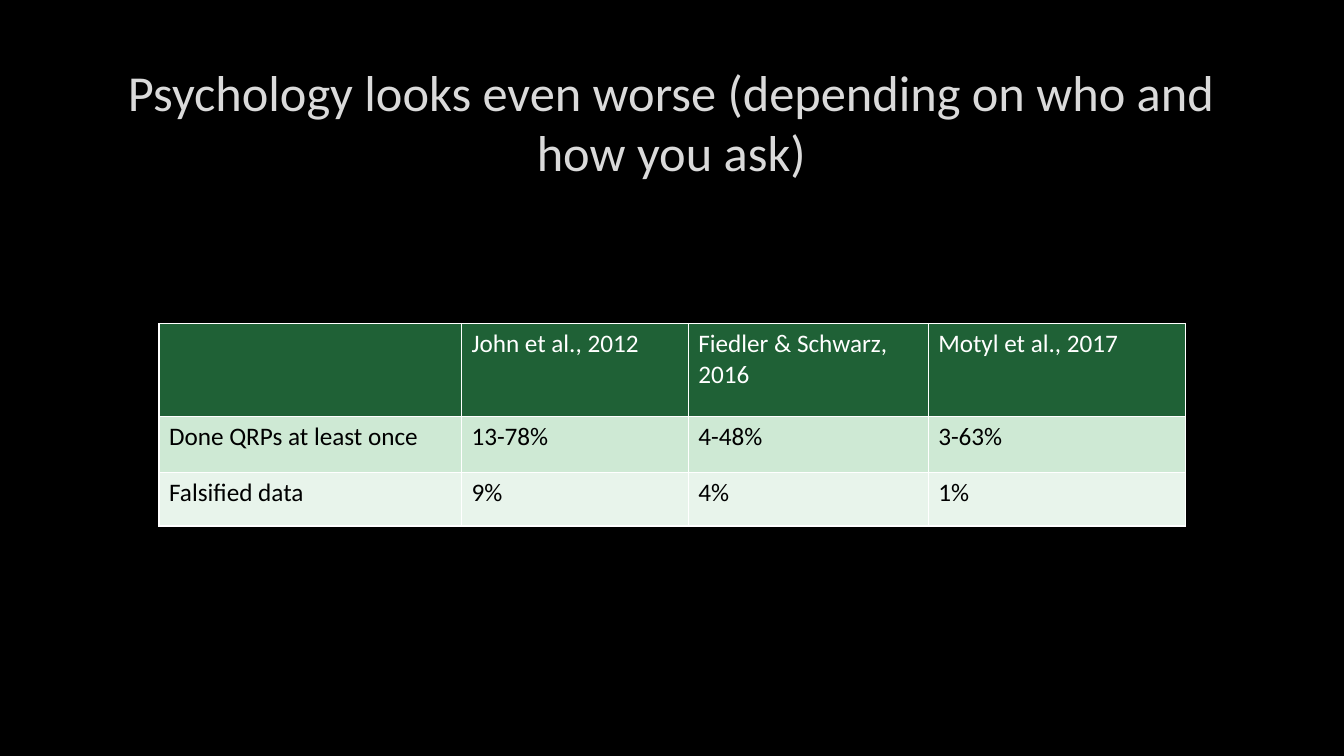
from lxml import etree
from pptx import Presentation
from pptx.dml.color import RGBColor
from pptx.enum.text import MSO_ANCHOR, MSO_AUTO_SIZE, PP_ALIGN
from pptx.oxml.ns import qn
from pptx.util import Pt

CENTER = PP_ALIGN.CENTER
MIDDLE = MSO_ANCHOR.MIDDLE
NO_AUTOFIT = MSO_AUTO_SIZE.NONE
TITLE_ONLY = 5

BLACK = RGBColor(0x00, 0x00, 0x00)
WHITE = RGBColor(0xFF, 0xFF, 0xFF)
LIGHT_GRAY = RGBColor(0xDA, 0xDA, 0xDA)
DARK_GREEN = RGBColor(0x1F, 0x61, 0x36)
MINT = RGBColor(0xCE, 0xE9, 0xD4)
PALE_MINT = RGBColor(0xE8, 0xF4, 0xEB)

TITLE = "Psychology looks even worse (depending on who and how you ask)"
SURVEYS = [
    ["", "John et al., 2012", "Fiedler & Schwarz, 2016", "Motyl et al., 2017"],
    ["Done QRPs at least once", "13-78%", "4-48%", "3-63%"],
    ["Falsified data", "9%", "4%", "1%"],
]
COL_WIDTHS = [216, 162, 171.4, 183.6]
ROW_HEIGHTS = [66.5, 40, 38.2]
ROW_COLORS = [(DARK_GREEN, WHITE), (MINT, BLACK), (PALE_MINT, BLACK)]


def format_font(font, size, color):
    values = {"name": "Calibri", "size": Pt(size), "bold": False}
    for name, value in values.items():
        setattr(font, name, value)
    font.color.rgb = color


def add_title(slide, text, left, top, width, height):
    sp = slide.shapes.title
    box = {"left": left, "top": top, "width": width, "height": height}
    for name, value in box.items():
        setattr(sp, name, Pt(value))
    tf = sp.text_frame
    frame = {"text": text, "word_wrap": True, "auto_size": NO_AUTOFIT,
             "vertical_anchor": MIDDLE}
    for name, value in frame.items():
        setattr(tf, name, value)
    p = tf.paragraphs[0]
    p.alignment = CENTER
    format_font(p.runs[0].font, 36, LIGHT_GRAY)


def add_borders(cell, color, width):
    tcPr = cell._tc.get_or_add_tcPr()
    for side in "LRTB":
        ln = etree.SubElement(tcPr, qn(f"a:ln{side}"), w=str(Pt(width)))
        fill = etree.SubElement(ln, qn("a:solidFill"))
        etree.SubElement(fill, qn("a:srgbClr"), val=str(color))


def fill_cell(cell, text, fill_color, text_color):
    add_borders(cell, WHITE, 1)
    cell.fill.solid()
    cell.fill.fore_color.rgb = fill_color
    p = cell.text_frame.paragraphs[0]
    if text:
        r = p.add_run()
        r.text = text
        format_font(r.font, 18, text_color)


def add_survey_table(slide, rows, left, top):
    frame = slide.shapes.add_table(
        len(rows), len(rows[0]), Pt(left), Pt(top),
        Pt(sum(COL_WIDTHS)), Pt(sum(ROW_HEIGHTS)))
    table = frame.table
    for column, width in zip(table.columns, COL_WIDTHS):
        column.width = Pt(width)
    for row, height, texts, colors in zip(
            table.rows, ROW_HEIGHTS, rows, ROW_COLORS):
        row.height = Pt(height)
        for cell, text in zip(row.cells, texts):
            fill_cell(cell, text, *colors)


def main():
    prs = Presentation()
    prs.slide_width, prs.slide_height = Pt(960), Pt(540)
    slide = prs.slides.add_slide(prs.slide_layouts[TITLE_ONLY])
    background = slide.background.fill
    background.solid()
    background.fore_color.rgb = BLACK
    add_title(slide, TITLE, 72, 48.4, 815, 76.4)
    add_survey_table(slide, SURVEYS, 113.6, 231)
    prs.save("out.pptx")


if __name__ == "__main__":
    main()
